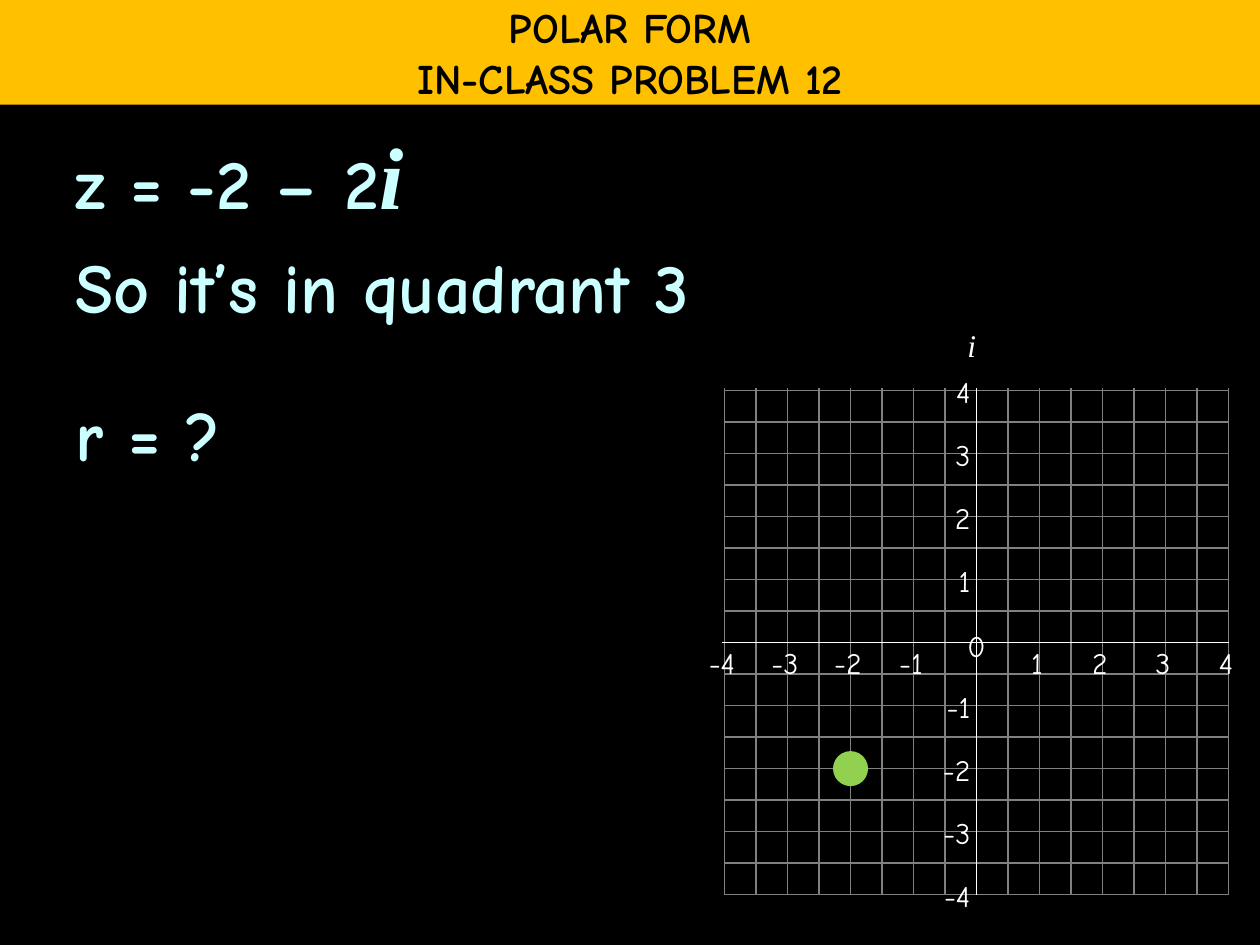
from dataclasses import dataclass
from lxml.etree import SubElement
from pptx import Presentation
from pptx.dml.color import RGBColor as RGB
from pptx.enum.shapes import MSO_CONNECTOR as Link, MSO_SHAPE as Kind
from pptx.enum.text import MSO_ANCHOR as Anchor, MSO_AUTO_SIZE as Fit, PP_ALIGN as Align
from pptx.oxml.ns import qn
from pptx.util import Inches, Pt


@dataclass(frozen=True)
class Theme:
    back: RGB = RGB(0, 0, 0)
    band: RGB = RGB(0xFF, 0xC0, 0)
    ink: RGB = RGB(0, 0, 0)
    body: RGB = RGB(0xCC, 0xFF, 0xFF)
    grid: RGB = RGB(0x80, 0x80, 0x80)
    axis: RGB = RGB(0xFF, 0xFF, 0xFF)
    dot: RGB = RGB(0x92, 0xD0, 0x50)
    font: str = "Comic Neue"
    math: str = "Times New Roman"
    head: int = 24
    text: int = 40
    unit: int = 50
    tick: int = 17
    name: int = 18


THEME = Theme()


def place(shape, box):
    shape.left, shape.top, shape.width, shape.height = map(Inches, box)


def style(run, size, color, font=THEME.font, bold=False, italic=False):
    run.font.size, run.font.name = Pt(size), font
    run.font.bold, run.font.italic = bold, italic
    run.font.color.rgb = color


def banner(slide, box, lines):
    title = slide.shapes.title
    place(title, box)
    title.fill.solid()
    title.fill.fore_color.rgb = THEME.band
    frame = title.text_frame
    frame.text = "\n".join(lines)
    frame.auto_size = Fit.NONE
    frame.word_wrap = False
    frame.vertical_anchor = Anchor.MIDDLE
    for para in frame.paragraphs:
        para.alignment = Align.CENTER
        style(para.runs[0], THEME.head, THEME.ink, bold=True)


def notes(slide, box, lines):
    frame = slide.shapes.add_textbox(*map(Inches, box)).text_frame
    frame.word_wrap = True
    frame.text = "\n".join(text for text, gap in lines)
    for para, (text, gap) in zip(frame.paragraphs, lines):
        para.space_before = Pt(gap)
        style(para.runs[0], THEME.text, THEME.body, bold=True)
    unit = frame.paragraphs[0].add_run()
    unit.text = "i"
    style(unit, THEME.unit, THEME.body, THEME.math, bold=True, italic=True)


def rule(shapes, start, end, color):
    line = shapes.add_connector(Link.STRAIGHT, *map(Inches, start + end))
    line.line.color.rgb = color
    line.line.width = Pt(0.75)
    SubElement(line._element.spPr, qn("a:effectLst"))


def label(shapes, box, text, align, size=THEME.tick, font=THEME.font, italic=False):
    frame = shapes.add_textbox(*map(Inches, box)).text_frame
    frame.word_wrap = True
    frame.text = text
    frame.paragraphs[0].alignment = align
    style(frame.paragraphs[0].runs[0], size, THEME.axis, font, italic=italic)


def plane(slide, box, reach, point):
    left, top, width, height = box
    right, low = left + width, top + height
    mid_x, mid_y = left + width / 2, top + height / 2
    unit = width / (2 * reach)
    shapes = slide.shapes.add_group_shape().shapes

    for step in range(-2 * reach, 2 * reach + 1):
        if step:
            x, y = mid_x + step * unit / 2, mid_y + step * unit / 2
            rule(shapes, (left, y), (right, y), THEME.grid)
            rule(shapes, (x, top - 0.02), (x, low), THEME.grid)
    rule(shapes, (left - 0.02, mid_y), (right, mid_y), THEME.axis)
    rule(shapes, (mid_x, top - 0.02), (mid_x, low), THEME.axis)

    wide, high = 0.45, 0.39
    for value in range(-reach, reach + 1):
        if value:
            x, y = mid_x + value * unit, mid_y - value * unit
            label(shapes, (x - 0.02 - wide / 2, mid_y - 0.03, wide, high), str(value), Align.CENTER)
            label(shapes, (mid_x + 0.05 - wide, y - 0.18, wide, high), str(value), Align.RIGHT)
    label(shapes, (mid_x - wide / 2, mid_y - 0.17, wide, high), "0", Align.CENTER)

    size = 0.25
    x, y = mid_x + point[0] * unit, mid_y - point[1] * unit
    dot = slide.shapes.add_shape(Kind.OVAL, *map(Inches, (x - size / 2, y - size / 2, size, size)))
    dot.shadow.inherit = False
    dot.fill.solid()
    dot.fill.fore_color.rgb = dot.line.color.rgb = THEME.dot
    dot.line.width = Pt(2)
    label(slide.shapes, (mid_x - 0.17, top - 0.56, 0.27, 0.4), "i", Align.LEFT,
          THEME.name, THEME.math, italic=True)


def main():
    deck = Presentation()
    deck.slide_width, deck.slide_height = Inches(10), Inches(7.5)
    slide = deck.slides.add_slide(deck.slide_layouts[5])
    slide.background.fill.solid()
    slide.background.fill.fore_color.rgb = THEME.back
    banner(slide, (0, 0, 10, 0.83), ("POLAR FORM", "IN-CLASS PROBLEM 12"))
    notes(slide, (0.5, 0.92, 9, 6.17),
          (("z = -2 – 2", 5), ("So it’s in quadrant 3", 9.5), ("r = ?", 36.5)))
    plane(slide, (5.75, 3.1, 4, 4), 4, (-2, -2))
    deck.save("out.pptx")


if __name__ == "__main__":
    main()
